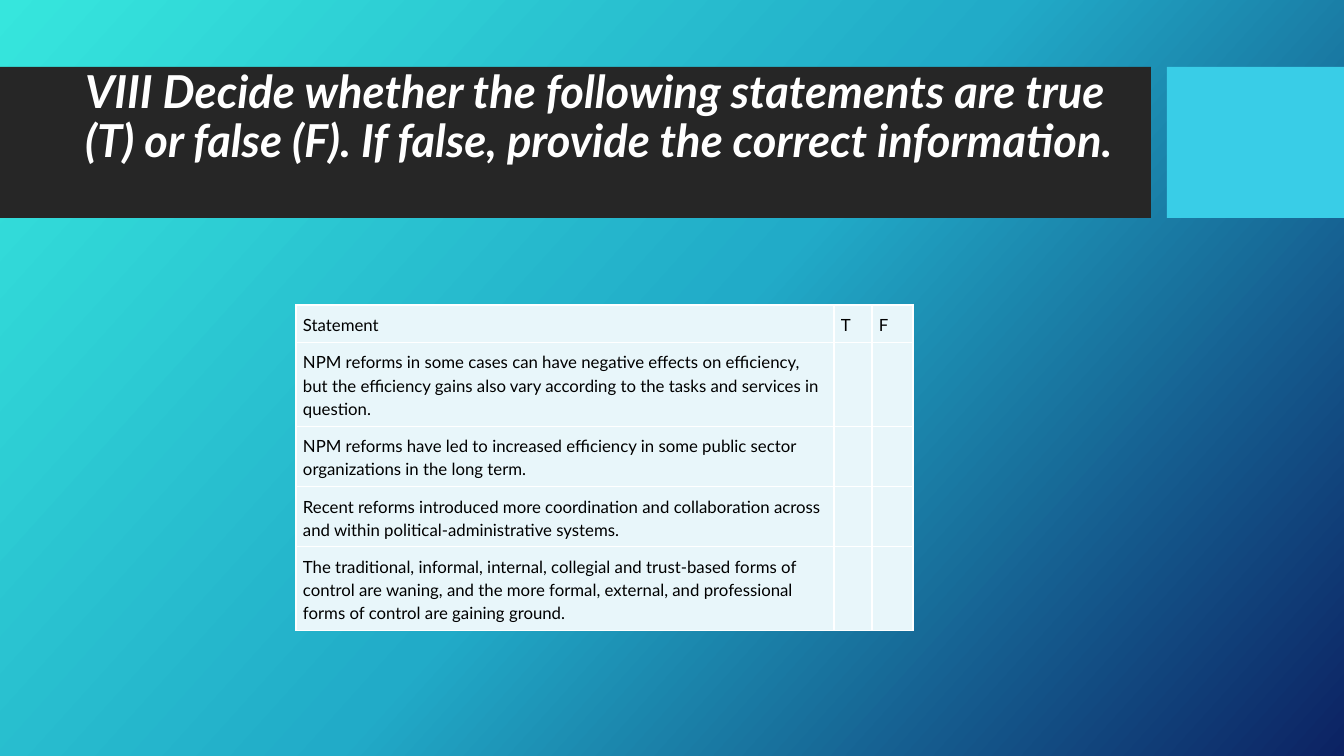
import copy

import pptx
import pptx.dml.color
import pptx.enum.shapes
import pptx.enum.text
import pptx.oxml
import pptx.oxml.ns
import pptx.util

EMU_PER_PX = 12192000 / 1344
FONT = "Lato"
TITLE = ("VIII Decide whether the following statements are true (T) or false (F). "
         "If false, provide the correct information.")
STATEMENT_ROWS = [
    (37, ["Statement", "T", "F"]),
    (84, ["NPM reforms in some cases can have negative effects on efficiency, but the "
          "efficiency gains also vary according to the tasks and services in question."]),
    (60, ["NPM reforms have led to increased efficiency in some public sector "
          "organizations in the long term."]),
    (60, ["Recent reforms introduced more coordination and collaboration across and "
          "within political-administrative systems."]),
    (84, ["The traditional, informal, internal, collegial and trust-based forms of control "
          "are waning, and the more formal, external, and professional forms of control "
          "are gaining ground."]),
]
COLUMN_WIDTHS = [538, 38, 41]
BACKGROUND_STOPS = [(0, "36E6DD"), (0.5, "21ABC8"), (1, "0C2263")]


def px(length):
    return pptx.util.Emu(round(length * EMU_PER_PX))


def color(value):
    return pptx.dml.color.RGBColor.from_string(value)


def apply(target, values):
    for name, value in values.items():
        setattr(target, name, value)


def insets(left, top, right, bottom):
    return {"margin_left": px(left), "margin_top": px(top),
            "margin_right": px(right), "margin_bottom": px(bottom)}


def write(frame, text, paragraph_format, font_format, font_color):
    para = frame.paragraphs[0]
    apply(para, paragraph_format)
    span = para.add_run()
    span.text = text
    apply(span.font, {"name": FONT, **font_format})
    span.font.color.rgb = color(font_color)


def paint_background(page):
    fill = page.background.fill
    fill.gradient()
    fill.gradient_angle = 318
    stop_list = page.element.find(".//" + pptx.oxml.ns.qn("a:gsLst"))
    stop_list.insert(1, copy.deepcopy(stop_list[0]))
    for stop, (position, value) in zip(fill.gradient_stops, BACKGROUND_STOPS):
        stop.position = position
        stop.color.rgb = color(value)


def add_band(page, left, top, width, height, value):
    band = page.shapes.add_shape(pptx.enum.shapes.MSO_SHAPE.RECTANGLE,
                                 px(left), px(top), px(width), px(height))
    band.shadow.inherit = False
    band.fill.solid()
    band.fill.fore_color.rgb = color(value)
    band.line.fill.background()
    band.element.getparent().insert(2, band.element)


def add_header(page, left, top, width, height):
    accent_width, gap = 177, 16
    bar_width = width - accent_width - gap
    add_band(page, left, top, bar_width, height, "262626")
    add_band(page, left + bar_width + gap, top, accent_width, height, "39CDE7")
    title = page.shapes.title
    apply(title, {"left": px(left + 75), "top": px(top + 16),
                  "width": px(1059), "height": px(119)})
    frame = title.text_frame
    apply(frame, {"word_wrap": True,
                  "auto_size": pptx.enum.text.MSO_AUTO_SIZE.NONE,
                  "vertical_anchor": pptx.enum.text.MSO_ANCHOR.MIDDLE,
                  **insets(10, 0, 10, 49)})
    write(frame, TITLE,
          {"alignment": pptx.enum.text.PP_ALIGN.LEFT, "line_spacing": 0.9},
          {"size": pptx.util.Pt(32.4), "bold": True, "italic": True}, "FFFFFF")


def add_borders(cell):
    properties = cell._tc.get_or_add_tcPr()
    for side in ("lnL", "lnR", "lnT", "lnB"):
        properties.append(pptx.oxml.parse_xml(
            f'<a:{side} {pptx.oxml.ns.nsdecls("a")} w="12700"><a:solidFill>'
            f'<a:srgbClr val="FFFFFF"/></a:solidFill></a:{side}>'))


def format_cell(cell, text):
    apply(cell, insets(7, 7, 7, 7))
    add_borders(cell)
    cell.fill.solid()
    cell.fill.fore_color.rgb = color("E8F6FA")
    if text:
        write(cell.text_frame, text,
              {"line_spacing": 1.15, "space_after": pptx.util.Pt(8)},
              {"size": pptx.util.Pt(12), "bold": False}, "000000")


def add_statements(page, left, top):
    height = sum(row_height for row_height, texts in STATEMENT_ROWS)
    table = page.shapes.add_table(len(STATEMENT_ROWS), len(COLUMN_WIDTHS), px(left), px(top),
                                  px(sum(COLUMN_WIDTHS)), px(height)).table
    apply(table, {"first_row": False, "horz_banding": False})
    for column, width in zip(table.columns, COLUMN_WIDTHS):
        column.width = px(width)
    for row, (row_height, texts) in zip(table.rows, STATEMENT_ROWS):
        row.height = px(row_height)
        for index, cell in enumerate(row.cells):
            format_cell(cell, texts[index] if index < len(texts) else "")


def main():
    deck = pptx.Presentation()
    apply(deck, {"slide_width": px(1344), "slide_height": px(756)})
    page = deck.slides.add_slide(deck.slide_layouts[5])
    paint_background(page)
    add_header(page, 0, 67, 1344, 151)
    add_statements(page, 296, 305)
    deck.save("out.pptx")


if __name__ == "__main__":
    main()
